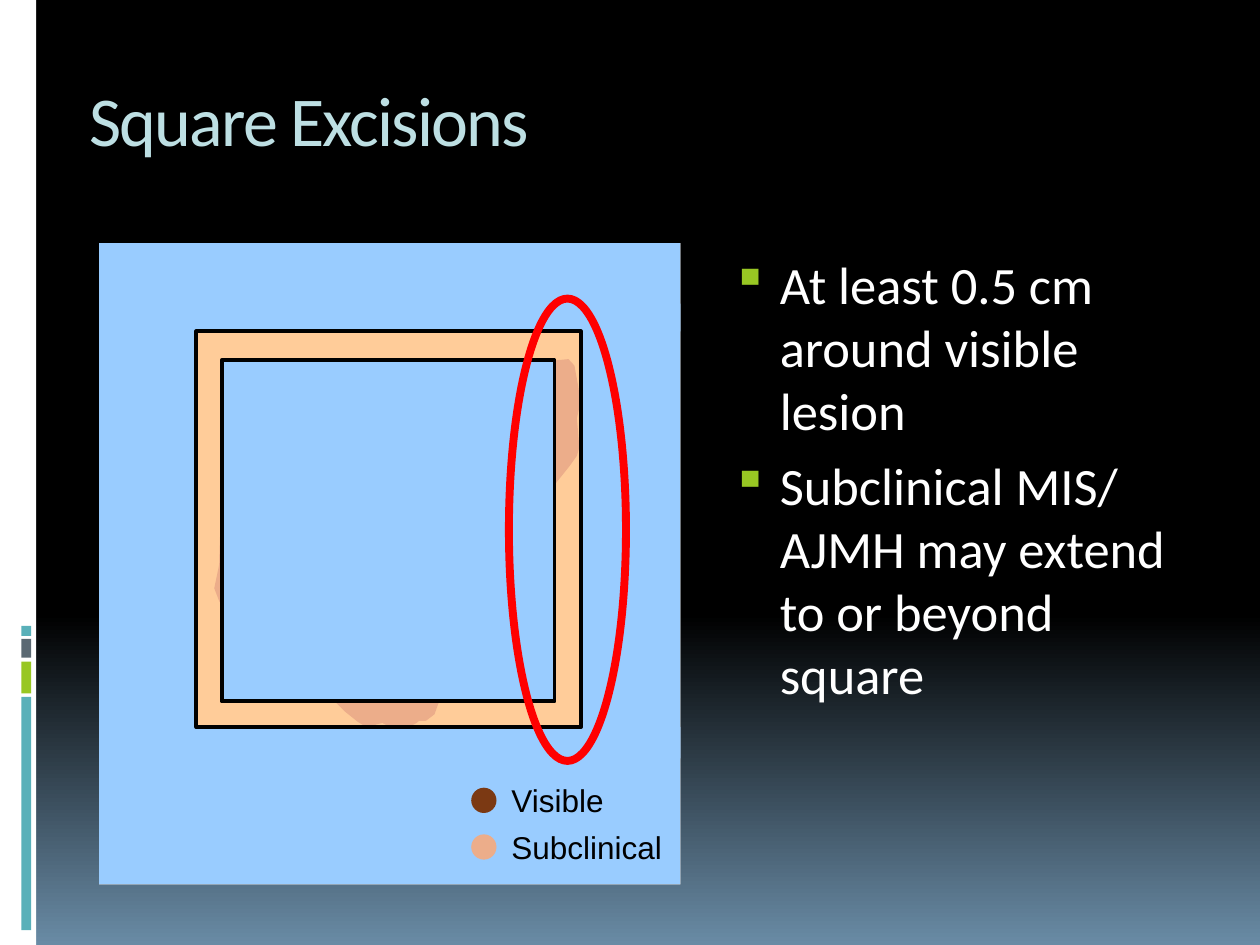
from copy import deepcopy
from dataclasses import dataclass

from lxml.etree import SubElement
from pptx import Presentation
from pptx.dml.color import RGBColor
from pptx.enum.shapes import MSO_SHAPE
from pptx.enum.text import MSO_ANCHOR, MSO_AUTO_SIZE
from pptx.oxml.ns import qn
from pptx.util import Cm, Pt


@dataclass(frozen=True)
class Theme:
    black: str = "000000"
    white: str = "FFFFFF"
    horizon: str = "698BA5"
    teal: str = "59B0B9"
    green: str = "98C723"
    slate: str = "5B6973"
    title: str = "BDDFE3"
    skin: str = "FFCC99"
    panel: str = "99CCFF"
    visible: str = "7B3913"
    subclinical: str = "ECAD8A"
    highlight: str = "FF0000"
    heading_font: str = "Calibri"
    label_font: str = "Arial"
    title_size: int = 40
    body_size: int = 30
    label_size: int = 18
    cut_width: float = 2.25
    highlight_width: float = 4.5


THEME = Theme()
RECTANGLE, OVAL = MSO_SHAPE.RECTANGLE, MSO_SHAPE.OVAL

TITLE = "Square Excisions"
BULLETS = [
    "At least 0.5 cm around visible lesion",
    "Subclinical MIS/ AJMH may extend to or beyond square",
]
LEGEND = [("Visible", THEME.visible, 2.39), ("Subclinical", THEME.subclinical, 3.58)]

# Boxes are left, top, width, height in centimetres.
TITLE_BOX = (1.55, 1.42, 22.58, 2.54)
BODY_BOX = (14.33, 4.95, 9.8, 12.7)
SIDEBAR = (0, 0, 0.73, 19.05)
SIDEBAR_MARKS = [  # top, height, colour
    (14.05, 4.7, THEME.teal),
    (13.34, 0.64, THEME.green),
    (12.88, 0.38, THEME.slate),
    (12.62, 0.2, THEME.teal),
]
SKIN_BOX = (2, 4.9, 11.72, 12.93)
SUBCLINICAL_SPUR = (7.65, 14.3, 0.81, 0.36)
SURROUND = [
    (2, 4.9, 11.72, 1.78),
    (2, 14.66, 11.72, 3.17),
    (2, 6.6, 1.96, 8.18),
    (11.71, 6.12, 2.01, 9.17),
]
OUTER_CUT = (3.96, 6.68, 7.75, 7.98)
INNER_AREA = (4.5, 7.29, 6.7, 6.83)
INNER_CUT = (4.47, 7.26, 6.71, 6.88)
HIGHLIGHT_RING = (10.26, 6.02, 2.36, 9.32)
LEGEND_LEFT, LEGEND_TOP, LEGEND_STEP, DOT = 9.5, 15.88, 0.94, 0.51

SUBCLINICAL_EDGE = [
    (8.05, 14.55), (8.59, 14.53), (8.76, 14.4), (8.86, 14.12), (8.74, 13.39),
    (8.89, 12.85), (9.47, 12.4), (9.93, 12.04), (10.41, 11.33), (10.49, 11.25),
    (10.26, 10.57), (10.92, 9.88), (11.2, 9.75), (11.48, 9.4), (11.63, 9.19),
    (11.68, 9.02), (11.63, 8.43), (11.7, 8.13), (11.66, 7.8), (11.58, 7.37),
    (11.46, 7.24), (10.95, 7.29), (10.34, 7.85), (9.86, 8.13), (8.97, 7.9),
    (8.03, 7.95), (7.16, 8.2), (6.63, 8.15), (6.07, 7.75), (5.72, 8),
    (5.46, 8.99), (4.88, 9.4), (4.55, 10.16), (4.45, 10.34), (4.42, 11.38),
    (4.32, 11.86), (4.42, 12.12), (4.6, 12.37), (4.93, 12.67), (5.28, 12.75),
    (5.82, 13.03), (6.32, 13.59), (6.5, 13.92), (6.73, 14.12), (6.96, 14.35),
    (7.21, 14.55), (7.39, 14.66), (7.87, 14.53),
]


def rgb(value):
    return RGBColor.from_string(value)


def style(shape, fill=None, line=None, width=None):
    shape.shadow.inherit = False
    if fill:
        shape.fill.solid()
        shape.fill.fore_color.rgb = rgb(fill)
    else:
        shape.fill.background()
    if line:
        shape.line.color.rgb = rgb(line)
        shape.line.width = Pt(width)
    else:
        shape.line.fill.background()


def add_shape(slide, kind, box, **look):
    shape = slide.shapes.add_shape(kind, *map(Cm, box))
    style(shape, **look)


def add_text(slide, box, lines, wrap=True, bullets=False, spacing=None, **font):
    frame = slide.shapes.add_textbox(*map(Cm, box)).text_frame
    frame.word_wrap = wrap
    frame.vertical_anchor = MSO_ANCHOR.TOP
    frame.auto_size = MSO_AUTO_SIZE.NONE if wrap else MSO_AUTO_SIZE.SHAPE_TO_FIT_TEXT
    color = font.pop("color")
    for index, line in enumerate(lines):
        paragraph = frame.add_paragraph() if index else frame.paragraphs[0]
        if index:
            paragraph.space_before = Pt(7)
        if bullets:
            add_bullet(paragraph)
        run = paragraph.add_run()
        run.text = line
        for name, value in font.items():
            setattr(run.font, name, value)
        run.font.color.rgb = rgb(color)
        if spacing is not None:
            run.font._element.set("spc", str(spacing))


def add_bullet(paragraph):
    properties = paragraph._p.get_or_add_pPr()
    properties.set("marL", str(Cm(1.14)))
    properties.set("indent", str(Cm(-0.97)))
    color = SubElement(properties, qn("a:buClr"))
    SubElement(color, qn("a:srgbClr"), val=THEME.green)
    SubElement(properties, qn("a:buSzPct"), val="95000")
    SubElement(properties, qn("a:buChar"), char="▪")


def paint_background(slide):
    """Black down to 65 % of the height, then fading to the horizon colour."""
    fill = slide.background.fill
    fill.gradient()
    fill.gradient_angle = 270
    first = slide.element.find(".//" + qn("a:gs"))
    first.addnext(deepcopy(first))
    stops = [(0, THEME.black), (0.65, THEME.black), (1, THEME.horizon)]
    for stop, (position, color) in zip(fill.gradient_stops, stops):
        stop.position = position
        stop.color.rgb = rgb(color)


def draw_sidebar(slide):
    add_shape(slide, RECTANGLE, SIDEBAR, fill=THEME.white)
    for top, height, color in SIDEBAR_MARKS:
        add_shape(slide, RECTANGLE, (0.43, top, 0.2, height), fill=color)


def draw_excision(slide):
    add_shape(slide, RECTANGLE, SKIN_BOX, fill=THEME.skin)
    edge = [(Cm(x), Cm(y)) for x, y in SUBCLINICAL_EDGE]
    builder = slide.shapes.build_freeform(*edge[0])
    builder.add_line_segments(edge[1:])
    style(builder.convert_to_shape(), fill=THEME.subclinical)
    add_shape(slide, OVAL, SUBCLINICAL_SPUR, fill=THEME.subclinical)
    for box in SURROUND:
        add_shape(slide, RECTANGLE, box, fill=THEME.panel)
    cut = {"line": THEME.black, "width": THEME.cut_width}
    add_shape(slide, RECTANGLE, OUTER_CUT, **cut)
    add_shape(slide, RECTANGLE, INNER_AREA, fill=THEME.panel)
    add_shape(slide, RECTANGLE, INNER_CUT, **cut)
    add_shape(slide, OVAL, HIGHLIGHT_RING,
              line=THEME.highlight, width=THEME.highlight_width)


def draw_legend(slide):
    for index, (label, color, width) in enumerate(LEGEND):
        top = LEGEND_TOP + index * LEGEND_STEP
        add_shape(slide, OVAL, (LEGEND_LEFT, top, DOT, DOT), fill=color)
        add_text(slide, (LEGEND_LEFT + 0.56, top - 0.26, width, 1.02), [label],
                 wrap=False, name=THEME.label_font, size=Pt(THEME.label_size),
                 color=THEME.black)


def main():
    presentation = Presentation()
    presentation.slide_width, presentation.slide_height = Cm(25.4), Cm(19.05)
    slide = presentation.slides.add_slide(presentation.slide_layouts[6])
    paint_background(slide)
    draw_sidebar(slide)
    add_text(slide, TITLE_BOX, [TITLE], spacing=-100, name=THEME.heading_font,
             size=Pt(THEME.title_size), color=THEME.title)
    add_text(slide, BODY_BOX, BULLETS, bullets=True, name=THEME.heading_font,
             size=Pt(THEME.body_size), color=THEME.white)
    draw_excision(slide)
    draw_legend(slide)
    presentation.save("out.pptx")


if __name__ == "__main__":
    main()
